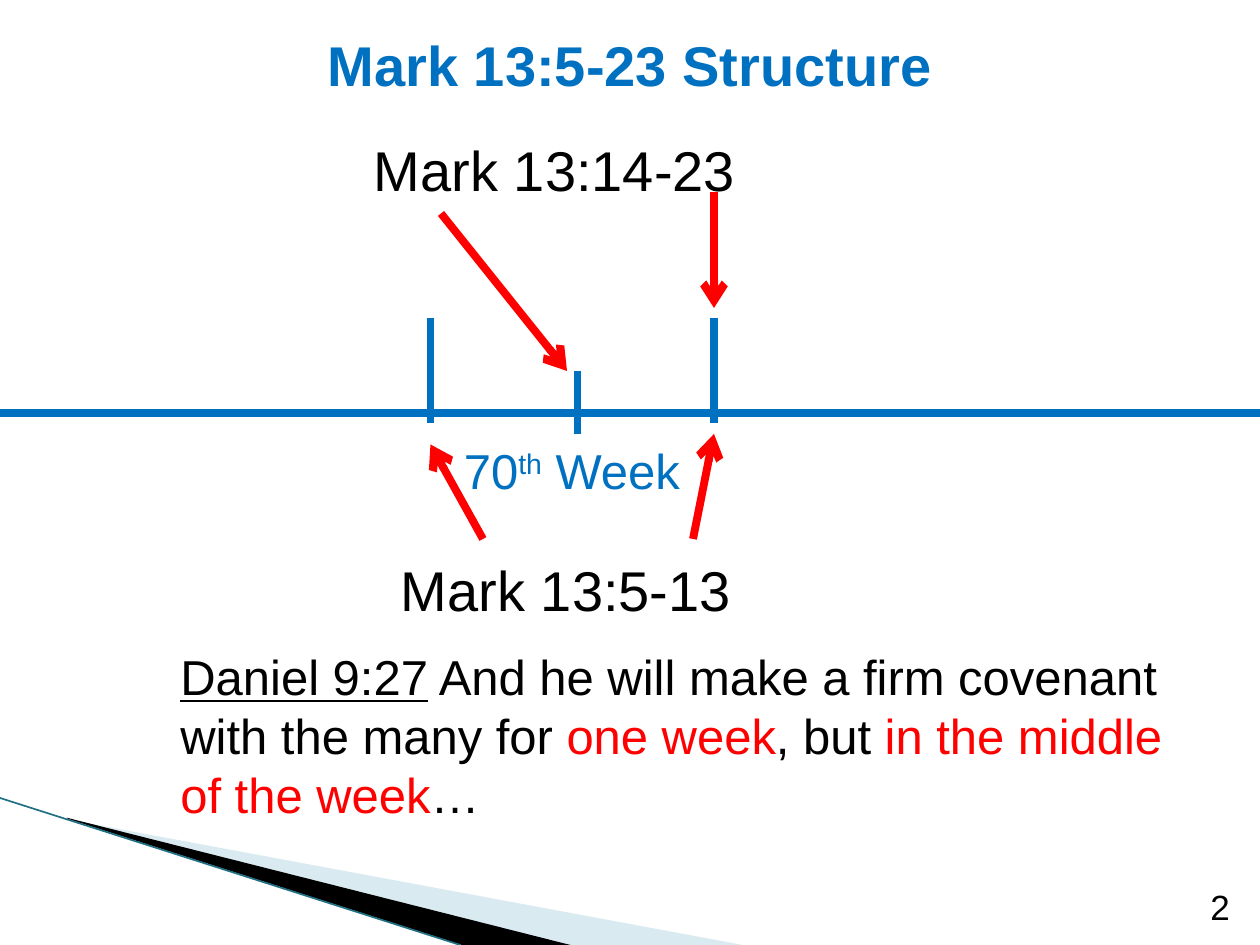
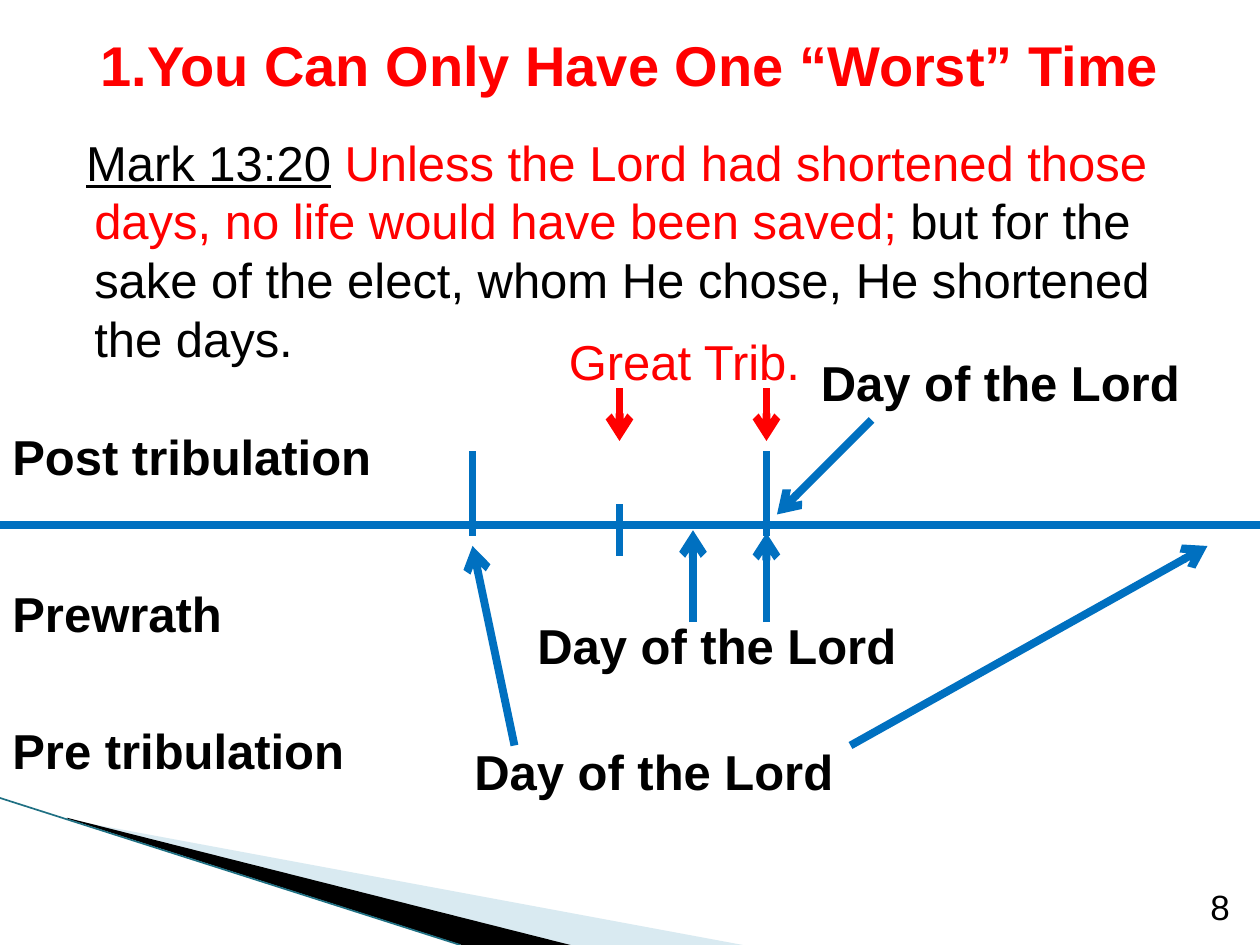
from lxml.etree import SubElement
from pptx import Presentation
from pptx.dml.color import RGBColor
from pptx.enum.shapes import MSO_CONNECTOR
from pptx.enum.text import MSO_ANCHOR, PP_ALIGN
from pptx.oxml.ns import qn
from pptx.util import Pt

# Shared look
FONT = "Arial"
BLUE, RED, BLACK = "0070C0", "FF0000", "000000"
PALE_BLUE, TEAL = "A0CBDC", "1F7083"
WIDTH, HEIGHT = 720, 540
LINE_WEIGHT = 4.5


def color(hex_text):
    return RGBColor.from_string(hex_text)


# Elements
def add_text(slide, text, left, top, width, height, size=28, fill=BLACK, bold=False,
             align=PP_ALIGN.LEFT, anchor=MSO_ANCHOR.TOP, indent=None):
    """Text is a string or a list of (string, format) runs."""
    frame = slide.shapes.add_textbox(Pt(left), Pt(top), Pt(width), Pt(height)).text_frame
    frame.word_wrap = True
    frame.vertical_anchor = anchor
    paragraph = frame.paragraphs[0]
    paragraph.alignment = align
    if indent:
        properties = paragraph._p.get_or_add_pPr()
        properties.set("marL", str(Pt(indent[0])))
        properties.set("indent", str(Pt(indent[1])))
    for content, style in [(text, {})] if isinstance(text, str) else text:
        run = paragraph.add_run()
        run.text = content
        run.font.name = FONT
        run.font.size = Pt(size)
        run.font.bold = bold
        run.font.underline = style.get("underline", False)
        run.font.color.rgb = color(style.get("fill", fill))
        if "baseline" in style:
            run.font._element.set("baseline", str(style["baseline"]))


def add_line(slide, start, end, fill=BLUE, weight=LINE_WEIGHT, arrow=False):
    line = slide.shapes.add_connector(
        MSO_CONNECTOR.STRAIGHT, *[Pt(value) for value in (*start, *end)])
    line.line.color.rgb = color(fill)
    line.line.width = Pt(weight)
    if arrow:
        SubElement(line.line._get_or_add_ln(), qn("a:tailEnd"), type="arrow")
    SubElement(line._element.spPr, qn("a:effectLst"))


def add_wedge(slide, points, fill, opacity=100):
    corners = [(Pt(x), Pt(y)) for x, y in points]
    builder = slide.shapes.build_freeform(*corners[0])
    builder.add_line_segments(corners[1:], close=True)
    shape = builder.convert_to_shape()
    shape.shadow.inherit = False
    shape.line.fill.background()
    shape.fill.solid()
    shape.fill.fore_color.rgb = color(fill)
    if opacity < 100:
        tint = shape._element.spPr.find(qn("a:solidFill"))[0]
        SubElement(tint, qn("a:alpha"), val=str(opacity * 1000))


def add_timeline(slide, axis, ticks):
    """Draw the axis and its (x, top, bottom) ticks."""
    add_line(slide, (0, axis), (WIDTH, axis))
    for x, top, bottom in ticks:
        add_line(slide, (x, top), (x, bottom))


def add_base(presentation, title, title_fill, number):
    """Start a slide with the corner wedges, title and page number."""
    slide = presentation.slides.add_slide(presentation.slide_layouts[6])
    add_wedge(slide, [(39.6, 468.5), (424.5, 540), (325.5, 540), (39.6, 468)], PALE_BLUE, 40)
    add_wedge(slide, [(38.2, 467.3), (326, 540), (264, 540), (38.9, 468)], BLACK)
    add_line(slide, (0, 456), (263, 540), TEAL, 0.95)
    add_text(slide, title, 24, 5.5, 672, 62.6, size=32, fill=title_fill, bold=True,
             align=PP_ALIGN.CENTER, anchor=MSO_ANCHOR.MIDDLE)
    add_text(slide, number, 631.4, 504.7, 78.5, 28.8, size=20,
             align=PP_ALIGN.RIGHT, anchor=MSO_ANCHOR.BOTTOM)
    return slide


# Slides
def build_structure(presentation):
    slide = add_base(presentation, "Mark 13:5-23 Structure", BLUE, "2")
    week_start, week_middle, week_end = 246, 330, 408
    add_timeline(slide, 236, [(week_start, 182, 242), (week_end, 182, 242),
                              (week_middle, 212, 248)])

    add_text(slide, "Mark 13:5-13", 222, 314, 228, 46, size=32)
    add_text(slide, "Mark 13:14-23", 198, 74, 258, 46, size=32, indent=(28.8, -20.16))
    for start, end in [((396, 308), (week_end, 248)), ((276, 308), (week_start, 254)),
                       ((252, 122), (324, 212)), ((week_end, 110), (week_end, 176))]:
        add_line(slide, start, end, RED, arrow=True)

    add_text(slide, [("Daniel 9:27", {"underline": True}),
                     (" And he will make a firm covenant with the many for ", {}),
                     ("one week", {"fill": RED}), (", but ", {}),
                     ("in the middle of the week", {"fill": RED}), ("…", {})],
             96, 366, 576, 109)
    add_text(slide, [("70", {}), ("th", {"baseline": 30000}), (" Week", {})],
             258, 248, 162, 41, fill=BLUE)


def build_worst_time(presentation):
    slide = add_base(presentation, "1.You Can Only Have One “Worst” Time", RED, "8")
    add_text(slide, [("Mark 13:20", {"underline": True}), (" ", {}),
                     ("Unless the Lord had shortened those days, "
                      "no life would have been saved;", {"fill": RED}),
                     (" but for the sake of the elect, whom He chose, "
                      "He shortened the days.", {})],
             18, 72, 684, 401, indent=(28.8, -4.6))

    week_start, week_middle, week_end = 270, 354, 438
    add_timeline(slide, 300, [(week_start, 258, 306), (week_end, 258, 306),
                              (week_middle, 288, 318)])

    # Views and where each places the day
    for view, top in [("Post tribulation", 240), ("Prewrath", 330), ("Pre tribulation", 408)]:
        add_text(slide, view, 0, top, 240, 41, bold=True)
    for left, top in [(462, 198), (300, 348), (264, 420)]:
        add_text(slide, "Day of the Lord", left, top, 234, 41, bold=True)
    for start, end in [((498, 240), (444, 294)),
                       ((396, 355.5), (396, 303)), ((week_end, 355.5), (week_end, 304.5)),
                       ((294, 426), (week_start, 312)), ((486, 426), (690, 312))]:
        add_line(slide, start, end, arrow=True)

    # Great tribulation
    add_text(slide, "Great Trib.", 318, 186, 156, 41, fill=RED)
    for x in (week_middle, week_end):
        add_line(slide, (x, 222), (x, 252), RED, arrow=True)


def main():
    presentation = Presentation()
    presentation.slide_width, presentation.slide_height = Pt(WIDTH), Pt(HEIGHT)
    build_structure(presentation)
    build_worst_time(presentation)
    presentation.save("out.pptx")


if __name__ == "__main__":
    main()
